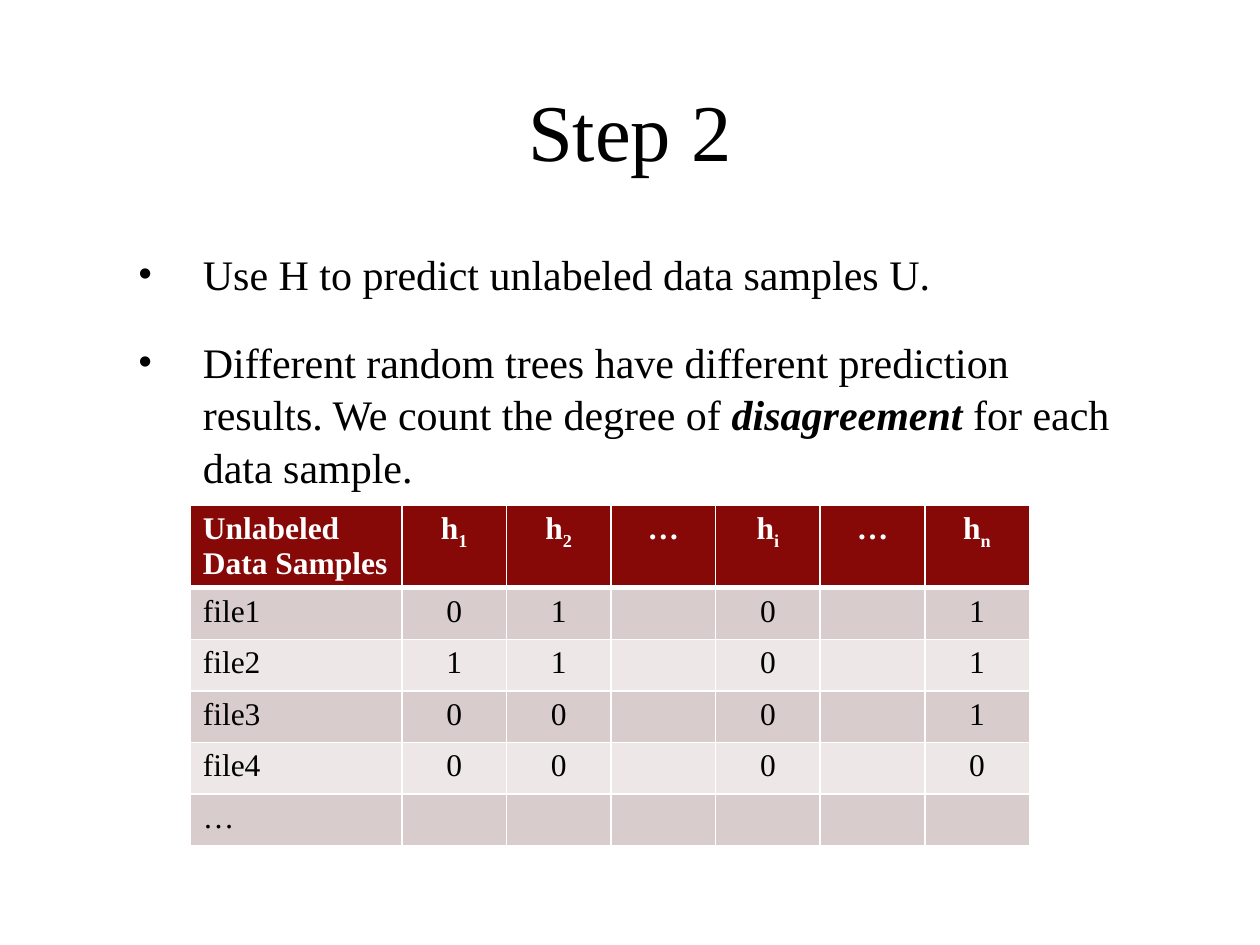
"""Build the "Step 2" slide: two bullets and a table of tree predictions."""
import pptx
import pptx.dml.color
import pptx.enum.text
import pptx.oxml
import pptx.oxml.ns
import pptx.util
from pptx.util import Inches

THEME = {
    "font": "Times New Roman",
    "title": 46, "body": 24, "cell": 18,
    "text": "000000", "light": "FFFFFF", "header": "860908",
    "bands": ["D9CCCC", "EDE7E7"],
}
ALIGN = pptx.enum.text.PP_ALIGN
NS = pptx.oxml.ns.nsdecls("a")


def add_run(paragraph, text, size, color=THEME["text"], bold=False, italic=False):
    run = paragraph.add_run()
    run.text = text
    run.font.name = THEME["font"]
    run.font.size = pptx.util.Pt(size)
    run.font.color.rgb = pptx.dml.color.RGBColor.from_string(color)
    run.font.bold = bold
    run.font.italic = italic
    return run


def add_border(cell, side, points):
    cell._tc.get_or_add_tcPr().append(pptx.oxml.parse_xml(
        f'<a:ln{side} {NS} w="{pptx.util.Pt(points)}"><a:solidFill>'
        f'<a:srgbClr val="{THEME["light"]}"/></a:solidFill></a:ln{side}>'))


deck = pptx.Presentation()
deck.slide_width, deck.slide_height = Inches(10), Inches(7.5)
slide = deck.slides.add_slide(deck.slide_layouts[1])

title = slide.shapes.title
title.left, title.top, title.width, title.height = map(Inches, (1, 0.55, 8, 0.95))
title.text_frame.auto_size = pptx.enum.text.MSO_AUTO_SIZE.NONE
title.text_frame.vertical_anchor = pptx.enum.text.MSO_ANCHOR.MIDDLE
heading = title.text_frame.paragraphs[0]
heading.alignment = ALIGN.CENTER
add_run(heading, "Step 2", THEME["title"])

body = slide.placeholders[1]
body.left, body.top, body.width, body.height = map(Inches, (1, 1.9, 8, 4.44))
body.text_frame.auto_size = pptx.enum.text.MSO_AUTO_SIZE.NONE
points = [
    [("Use H to predict unlabeled data samples U.", False)],
    [("Different random trees have different prediction results. "
      "We count the degree of ", False),
     ("disagreement ", True),
     ("for each data sample.", False)],
]
for index, point in enumerate(points):
    bullet = body.text_frame.add_paragraph() if index else body.text_frame.paragraphs[0]
    properties = bullet._p.get_or_add_pPr()
    properties.set("marL", str(Inches(0.51)))
    properties.set("indent", str(Inches(-0.51)))
    properties.append(pptx.oxml.parse_xml(f'<a:buSzPct {NS} val="90000"/>'))
    properties.append(pptx.oxml.parse_xml(f'<a:buChar {NS} char="•"/>'))
    bullet.line_spacing = 1.05
    bullet.space_before = pptx.util.Pt(20 if index else 0)
    for text, emphasis in point:
        add_run(bullet, text, THEME["body"], bold=emphasis, italic=emphasis)

predictions = [
    ["Unlabeled Data Samples", "h_1", "h_2", "…", "h_i", "…", "h_n"],
    ["file1", "0", "1", "", "0", "", "1"],
    ["file2", "1", "1", "", "0", "", "1"],
    ["file3", "0", "0", "", "0", "", "1"],
    ["file4", "0", "0", "", "0", "", "0"],
    ["…", "", "", "", "", "", ""],
]
table = slide.shapes.add_table(
    len(predictions), len(predictions[0]),
    Inches(1.51), Inches(4.01), Inches(6.66), Inches(2.69)).table
for index, column in enumerate(table.columns):
    column.width = Inches(0.83 if index else 1.68)
for index, row in enumerate(table.rows):
    row.height = Inches(0.41 if index else 0.64)

for row_index, values in enumerate(predictions):
    is_header = row_index == 0
    fill = THEME["header"] if is_header else THEME["bands"][(row_index - 1) % 2]
    color = THEME["light"] if is_header else THEME["text"]
    for column_index, value in enumerate(values):
        cell = table.cell(row_index, column_index)
        add_border(cell, "L", 1)
        add_border(cell, "R", 1)
        add_border(cell, "T", 3 if row_index == 1 else 1)
        add_border(cell, "B", 3 if is_header else 1)
        cell.fill.solid()
        cell.fill.fore_color.rgb = pptx.dml.color.RGBColor.from_string(fill)
        entry = cell.text_frame.paragraphs[0]
        entry.alignment = ALIGN.CENTER if column_index else ALIGN.LEFT
        base, _, subscript = value.partition("_")
        if base:
            add_run(entry, base, THEME["cell"], color, bold=is_header)
        if subscript:
            lowered = add_run(entry, subscript, THEME["cell"], color, bold=is_header)
            lowered._r.get_or_add_rPr().set("baseline", "-25000")

deck.save("out.pptx")
